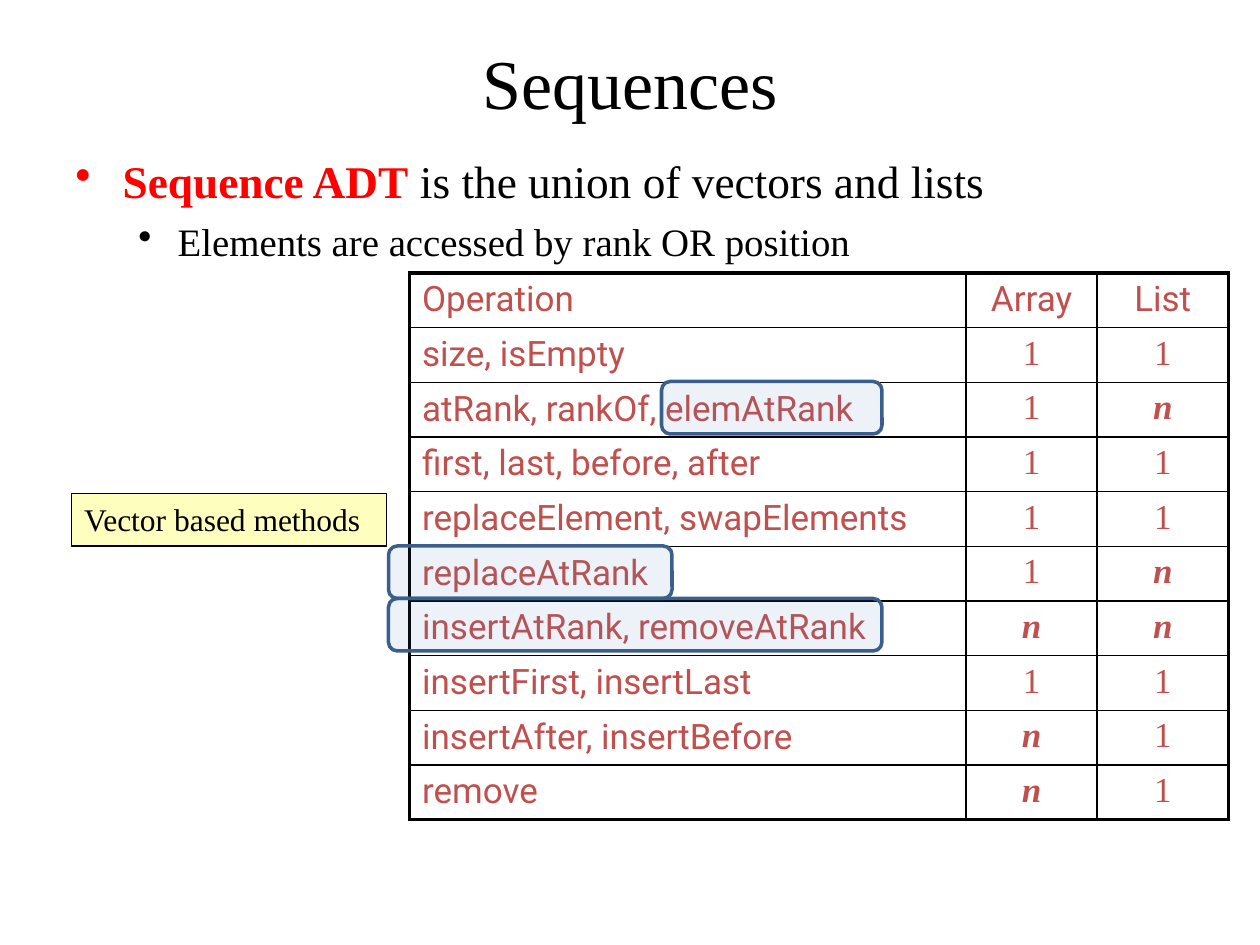
from pptx import Presentation
from pptx.dml.color import RGBColor
from pptx.enum.shapes import MSO_SHAPE
from pptx.enum.text import MSO_ANCHOR, PP_ALIGN
from pptx.oxml.ns import qn
from pptx.util import Pt
from lxml.etree import SubElement

THEME = {
    "serif": "Times New Roman", "sans": "Roboto",
    "black": "000000", "red": "FF0000", "brick": "C0504D",
    "note": "FEFEBE", "mark": "4F81BD", "mark_line": "3A5F8C",
    "title": 40, "point": 25.9, "subpoint": 22.2, "cell": 20, "label": 18,
}

TITLE = "Sequences"
POINTS = [
    {"level": 0, "indent": 27, "hang": 27, "before": 3, "size": "point",
     "runs": [("Sequence ADT", "red", True),
              (" is the union of vectors and lists", "black", False)]},
    {"level": 1, "indent": 58.5, "hang": 22.5, "before": 5.5, "size": "subpoint",
     "runs": [("Elements are accessed by rank OR position", "black", False)]},
]
OPERATIONS = [
    ("Operation", "Array", "List"),
    ("size, isEmpty", "1", "1"),
    ("atRank, rankOf, elemAtRank", "1", "n"),
    ("first, last, before, after", "1", "1"),
    ("replaceElement, swapElements", "1", "1"),
    ("replaceAtRank", "1", "n"),
    ("insertAtRank, removeAtRank", "n", "n"),
    ("insertFirst, insertLast", "1", "1"),
    ("insertAfter, insertBefore", "n", "1"),
    ("remove", "n", "1"),
]
NOTE = "Vector based methods"
HIGHLIGHTS = [(378, 218, 126), (222, 312, 162), (222, 342, 282)]

TABLE_LEFT, TABLE_TOP = 234, 156
COLUMN_WIDTHS = (318, 75, 75)
ROW_HEIGHT = 31.25
THICK, THIN = 2.25, 1
BOX_HEIGHT = 30


def color(name):
    return RGBColor.from_string(THEME[name])


def add_run(paragraph, text, size, tint, font="serif", bold=False, italic=False):
    run = paragraph.add_run()
    run.text = text
    run.font.name = THEME[font]
    run.font.size = Pt(THEME[size])
    run.font.color.rgb = color(tint)
    run.font.bold = bold
    run.font.italic = italic


def add_text_frame(slide, left, top, width, height):
    frame = slide.shapes.add_textbox(Pt(left), Pt(top), Pt(width), Pt(height)).text_frame
    frame.word_wrap = True
    return frame


def add_box(slide, preset, bounds, fill, line, line_width):
    box = slide.shapes.add_shape(preset, *(Pt(length) for length in bounds))
    box.shadow.inherit = False
    box.fill.solid()
    box.fill.fore_color.rgb = color(fill)
    box.line.color.rgb = color(line)
    box.line.width = Pt(line_width)
    return box


def add_title(slide):
    frame = add_text_frame(slide, 36, 21.6, 648, 50.4)
    frame.vertical_anchor = MSO_ANCHOR.MIDDLE
    heading = frame.paragraphs[0]
    heading.alignment = PP_ALIGN.CENTER
    add_run(heading, TITLE, "title", "black")


def add_points(slide):
    frame = add_text_frame(slide, 36, 84.24, 648, 60)
    for index, point in enumerate(POINTS):
        paragraph = frame.add_paragraph() if index else frame.paragraphs[0]
        paragraph.level = point["level"]
        paragraph.space_before = Pt(point["before"])
        properties = paragraph._p.get_or_add_pPr()
        properties.set("marL", str(Pt(point["indent"])))
        properties.set("indent", str(-Pt(point["hang"])))
        SubElement(properties, qn("a:buChar")).set("char", "•")
        for text, tint, bold in point["runs"]:
            add_run(paragraph, text, point["size"], tint, bold=bold)


def set_borders(cell, widths):
    properties = cell._tc.get_or_add_tcPr()
    for side, width in widths.items():
        edge = SubElement(properties, qn(f"a:ln{side}"), w=str(Pt(width)))
        fill = SubElement(edge, qn("a:solidFill"))
        SubElement(fill, qn("a:srgbClr"), val=THEME["black"])


def add_operations(slide):
    last_row, last_column = len(OPERATIONS) - 1, len(COLUMN_WIDTHS) - 1
    table = slide.shapes.add_table(
        len(OPERATIONS), len(COLUMN_WIDTHS), Pt(TABLE_LEFT), Pt(TABLE_TOP),
        Pt(sum(COLUMN_WIDTHS)), Pt(ROW_HEIGHT * len(OPERATIONS))).table
    table.first_row = False
    table.horz_banding = False
    for column, width in zip(table.columns, COLUMN_WIDTHS):
        column.width = Pt(width)
    for r, operation in enumerate(OPERATIONS):
        table.rows[r].height = Pt(ROW_HEIGHT)
        for c, text in enumerate(operation):
            cell = table.cell(r, c)
            set_borders(cell, {
                "L": THICK if c == 0 else THIN,
                "R": THICK if c == last_column else THIN,
                "T": THICK if r == 0 else THIN,
                "B": THICK if r == last_row else THIN,
            })
            cell.fill.background()
            paragraph = cell.text_frame.paragraphs[0]
            paragraph.alignment = PP_ALIGN.CENTER if c else PP_ALIGN.LEFT
            font = "serif" if r and c else "sans"
            linear = text == "n"
            add_run(paragraph, text, "cell", "brick", font, linear, linear)


def add_note(slide):
    note = add_box(slide, MSO_SHAPE.RECTANGLE, (41, 282, 180, BOX_HEIGHT),
                   "note", "black", 0.75)
    frame = note.text_frame
    frame.word_wrap = True
    frame.vertical_anchor = MSO_ANCHOR.TOP
    frame.paragraphs[0].alignment = PP_ALIGN.LEFT
    add_run(frame.paragraphs[0], NOTE, "label", "black")


def add_highlights(slide):
    for left, top, width in HIGHLIGHTS:
        highlight = add_box(slide, MSO_SHAPE.ROUNDED_RECTANGLE,
                            (left, top, width, BOX_HEIGHT), "mark", "mark_line", 2)
        tint = highlight._element.spPr.find(qn("a:solidFill")).find(qn("a:srgbClr"))
        SubElement(tint, qn("a:alpha"), val="10000")


def main():
    deck = Presentation()
    deck.slide_width, deck.slide_height = Pt(720), Pt(540)
    slide = deck.slides.add_slide(deck.slide_layouts[6])
    add_title(slide)
    add_points(slide)
    add_operations(slide)
    add_note(slide)
    add_highlights(slide)
    deck.save("out.pptx")


if __name__ == "__main__":
    main()
